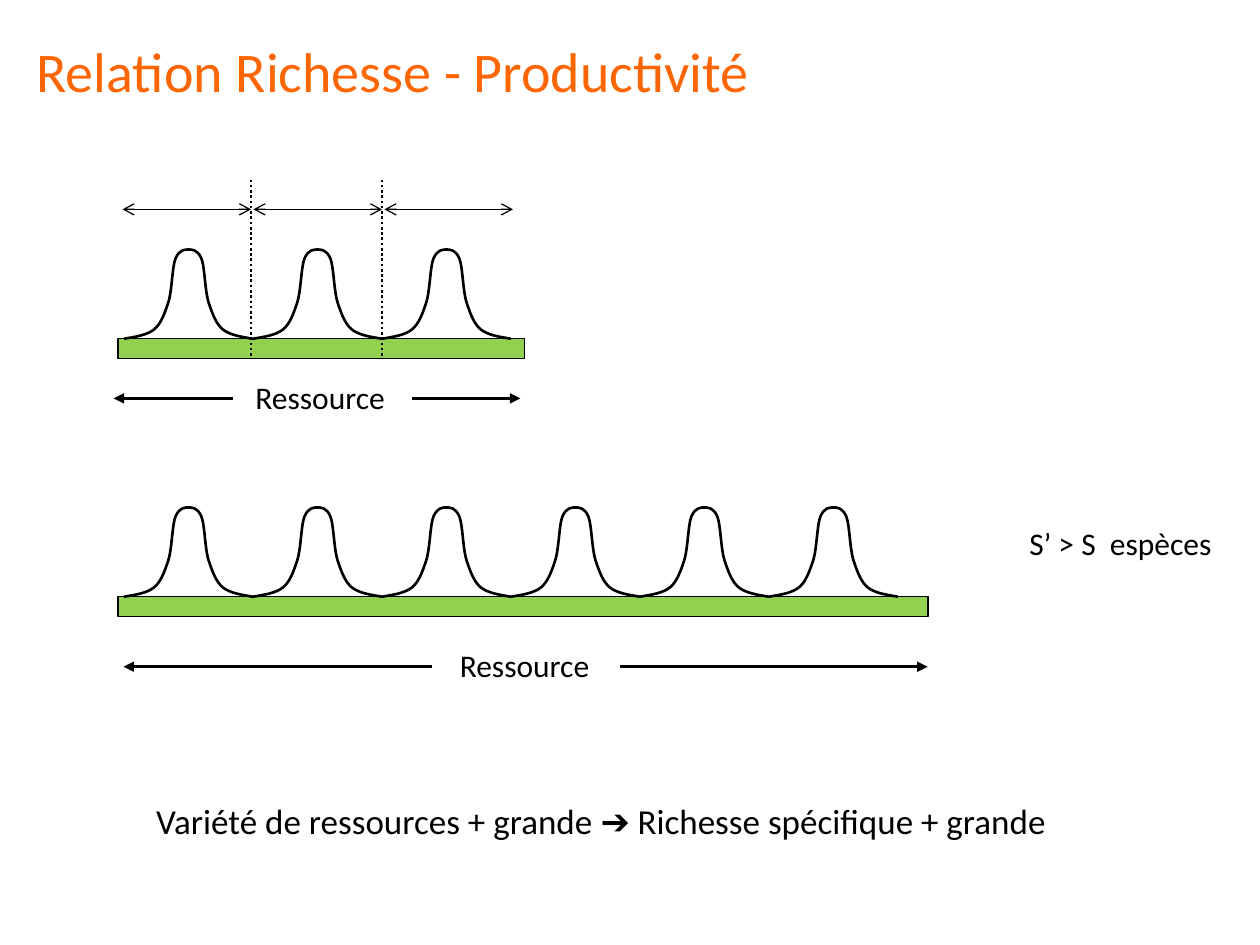
import pptx
import pptx.dml.color
import pptx.enum.dml
import pptx.enum.shapes
import pptx.enum.text
import pptx.oxml
import pptx.oxml.ns
import pptx.util

Cm = pptx.util.Cm
Pt = pptx.util.Pt
RGBColor = pptx.dml.color.RGBColor
Shapes = pptx.enum.shapes.MSO_SHAPE
Align = pptx.enum.text.PP_ALIGN
Anchor = pptx.enum.text.MSO_ANCHOR
AutoSize = pptx.enum.text.MSO_AUTO_SIZE

ORANGE = RGBColor(0xFF, 0x66, 0x00)
GREEN = RGBColor(0x92, 0xD0, 0x50)
BLACK = RGBColor(0, 0, 0)
WHITE = RGBColor(0xFF, 0xFF, 0xFF)

TITLE = ("Relation Richesse - Productivité", (0.48, 0.61, 22, 2.08))
CONCLUSION = (
    "Variété de ressources + grande ➔ Richesse spécifique + grande",
    (2.9, 16, 18.75, 1.12),
)
LABELS = [
    ("Ressource", (4.9, 7.49, 3.15, 1.02)),
    ("Ressource", (9.02, 12.9, 3.15, 1.02)),
    ("S’ > S  espèces", (20.5, 10.44, 4.19, 1.02)),
]
NICHE_ROWS = [
    {"species": 3, "baseline": 6.83, "bar_width": 8.2},
    {"species": 6, "baseline": 12.03, "bar_width": 16.33},
]
RESOURCE_ARROWS = [
    (4.7, 2.29, 8.03),
    (8.31, 10.49, 8.03),
    (8.71, 2.49, 13.44),
    (12.5, 18.7, 13.44),
]
BAR_LEFT, BAR_HEIGHT = 2.38, 0.4
NICHE_LEFT, NICHE_PITCH = 2.5, 2.6
HALF_NICHE = [
    (0, 0),
    (0.23, 0.04), (0.46, 0.07), (0.61, 0.19),
    (0.74, 0.3), (0.81, 0.48), (0.89, 0.72),
    (0.97, 0.96), (0.97, 1.45), (1.04, 1.62),
    (1.12, 1.8), (1.22, 1.8), (1.32, 1.8),
]
SPAN_LEFT, SPAN_PITCH, SPAN_WIDTH, SPAN_Y = 2.47, 2.64, 2.59, 4.22
SEPARATOR_TOP, SEPARATOR_HEIGHT = 3.62, 3.61


def lengths(values):
    return [Cm(value) for value in values]


def write(shape, text, size, color=BLACK):
    frame = shape.text_frame
    frame.text = text
    paragraph = frame.paragraphs[0]
    paragraph.alignment = Align.LEFT
    font_format = {"name": "Calibri", "size": Pt(size), "bold": False}
    for name, value in font_format.items():
        setattr(paragraph.runs[0].font, name, value)
    paragraph.runs[0].font.color.rgb = color
    return frame


def outline(shape, width, color=BLACK):
    shape.line.color.rgb = color
    shape.line.width = Pt(width)


def add_rectangle(slide, box, line_color):
    shape = slide.shapes.add_shape(Shapes.RECTANGLE, *lengths(box))
    shape.shadow.inherit = False
    outline(shape, 0.75, line_color)
    return shape


def add_line(slide, start, end, width, dash=None, **arrowheads):
    connector = slide.shapes.add_connector(
        pptx.enum.shapes.MSO_CONNECTOR.STRAIGHT, *lengths(start + end)
    )
    outline(connector, width)
    if dash:
        connector.line.dash_style = dash
    line = connector.line._get_or_add_ln()
    for name, kind in arrowheads.items():
        end_mark = pptx.oxml.parse_xml(
            f'<a:{name} {pptx.oxml.ns.nsdecls("a")} type="{kind}"/>'
        )
        line.append(end_mark)
    effects = pptx.oxml.parse_xml(f'<a:effectLst {pptx.oxml.ns.nsdecls("a")}/>')
    connector._element.spPr.append(effects)


def bend_segments(shape):
    segments = shape._element.findall(".//" + pptx.oxml.ns.qn("a:lnTo"))
    for first in range(0, len(segments), 3):
        curve = pptx.oxml.parse_xml(
            f'<a:cubicBezTo {pptx.oxml.ns.nsdecls("a")}/>'
        )
        segments[first].addprevious(curve)
        for segment in segments[first:first + 3]:
            curve.append(segment[0])
            segment.getparent().remove(segment)


def add_half_niche(slide, foot, baseline, direction):
    points = [
        (Cm(foot + direction * x), Cm(baseline - height)) for x, height in HALF_NICHE
    ]
    builder = slide.shapes.build_freeform(*points[0], scale=1.0)
    builder.add_line_segments(points[1:], close=False)
    shape = builder.convert_to_shape()
    bend_segments(shape)
    shape.shadow.inherit = False
    shape.fill.background()
    outline(shape, 1.5)


def add_niche_row(slide, species, baseline, bar_width):
    box = (BAR_LEFT, baseline, bar_width, BAR_HEIGHT)
    bar = add_rectangle(slide, box, BLACK)
    bar.fill.solid()
    bar.fill.fore_color.rgb = GREEN
    for index in range(species):
        left = NICHE_LEFT + index * NICHE_PITCH
        add_half_niche(slide, left, baseline, 1)
        add_half_niche(slide, left + NICHE_PITCH, baseline, -1)


def add_title(slide):
    text, box = TITLE
    title = slide.shapes.title
    for name, value in zip(("left", "top", "width", "height"), lengths(box)):
        setattr(title, name, value)
    frame = write(title, text, 32, ORANGE)
    frame.auto_size = AutoSize.NONE
    frame.vertical_anchor = Anchor.TOP


def main():
    presentation = pptx.Presentation()
    presentation.slide_width = Cm(25.4)
    presentation.slide_height = Cm(19.05)
    slide = presentation.slides.add_slide(presentation.slide_layouts[5])
    add_title(slide)

    for row in NICHE_ROWS:
        add_niche_row(slide, **row)
    for text, box in LABELS:
        label = slide.shapes.add_textbox(*lengths(box))
        frame = write(label, text, 18)
        frame.word_wrap = False
        frame.auto_size = AutoSize.SHAPE_TO_FIT_TEXT
    for start, end, y in RESOURCE_ARROWS:
        add_line(slide, (start, y), (end, y), 1.5, tailEnd="triangle")

    for index in range(3):
        left = SPAN_LEFT + index * SPAN_PITCH
        right = left + SPAN_WIDTH
        add_line(slide, (left, SPAN_Y), (right, SPAN_Y), 0.75,
                 headEnd="arrow", tailEnd="arrow")
        if index < 2:
            add_line(slide, (right, SEPARATOR_TOP),
                     (right, SEPARATOR_TOP + SEPARATOR_HEIGHT), 1.5,
                     pptx.enum.dml.MSO_LINE.ROUND_DOT)

    text, box = CONCLUSION
    conclusion = add_rectangle(slide, box, WHITE)
    conclusion.fill.background()
    frame = write(conclusion, text, 20)
    frame.word_wrap = False
    frame.auto_size = AutoSize.SHAPE_TO_FIT_TEXT
    frame.vertical_anchor = Anchor.TOP
    presentation.save("out.pptx")


if __name__ == "__main__":
    main()
